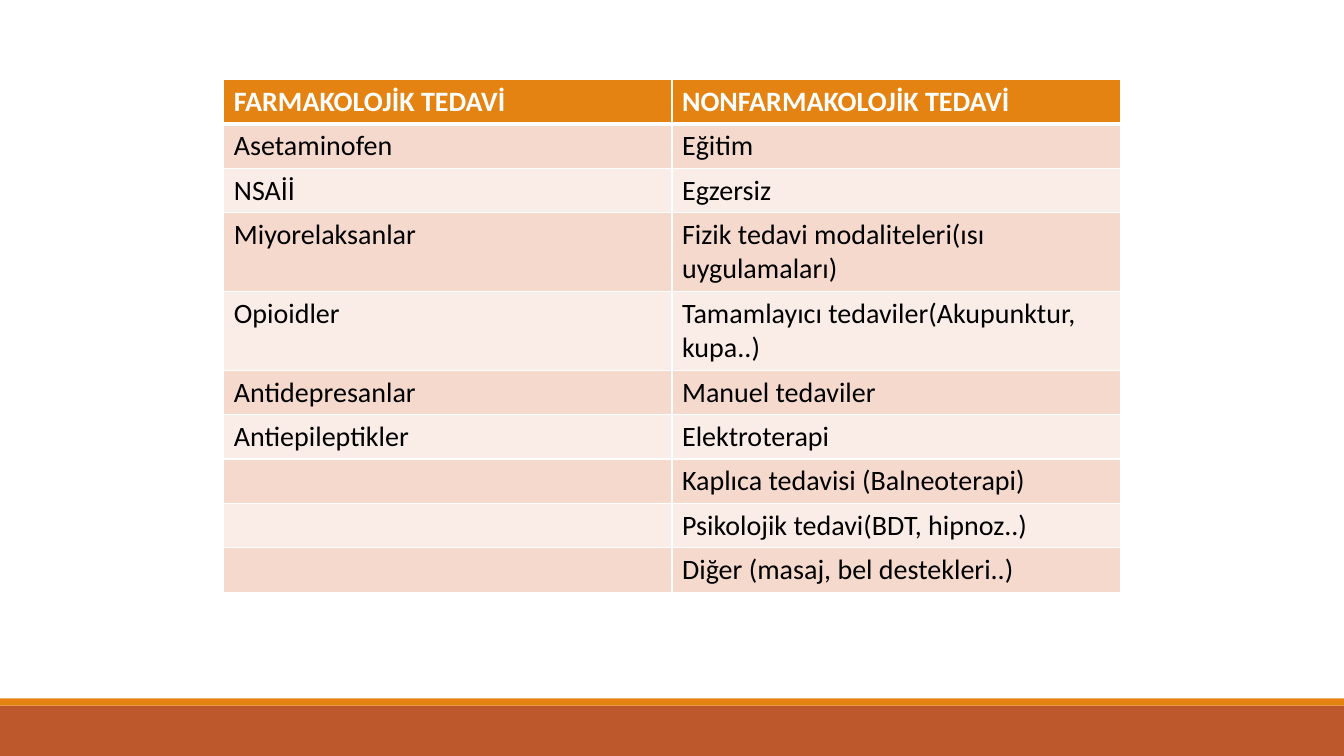
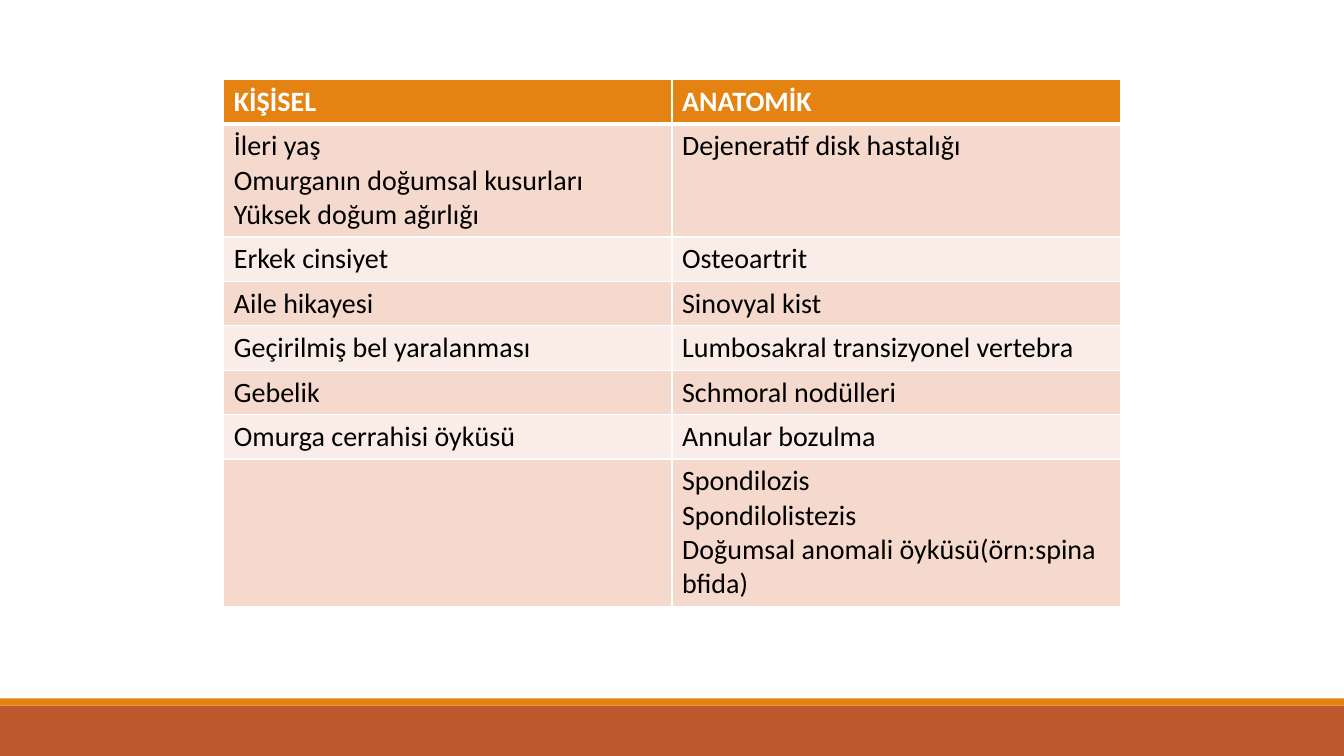
"""Build two slides with treatment and risk factor tables."""
from lxml import etree
from pptx import Presentation
from pptx.dml.color import RGBColor
from pptx.enum import shapes
from pptx.oxml import ns
from pptx.util import Inches, Pt

WHITE = RGBColor(0xFF, 0xFF, 0xFF)
BLACK = RGBColor(0x00, 0x00, 0x00)
ORANGE = RGBColor(0xE4, 0x83, 0x12)
RUST = RGBColor(0xBD, 0x58, 0x2C)
ROSE = RGBColor(0xF5, 0xD9, 0xCC)
PALE = RGBColor(0xFA, 0xED, 0xE7)
FONT = "Calibri"
WIDE, HIGH = 13.33, 7.5
COL, ROW = 4.445, 0.41

CARE = [
    ("FARMAKOLOJİK TEDAVİ", "NONFARMAKOLOJİK TEDAVİ"),
    ("Asetaminofen", "Eğitim"),
    ("NSAİİ", "Egzersiz"),
    ("Miyorelaksanlar", "Fizik tedavi modaliteleri(ısı uygulamaları)"),
    ("Opioidler", "Tamamlayıcı tedaviler(Akupunktur, kupa..)"),
    ("Antidepresanlar", "Manuel tedaviler"),
    ("Antiepileptikler", "Elektroterapi"),
    ("", "Kaplıca tedavisi (Balneoterapi)"),
    ("", "Psikolojik tedavi(BDT, hipnoz..)"),
    ("", "Diğer (masaj, bel destekleri..)"),
]
RISKS = [
    ("KİŞİSEL", "ANATOMİK"),
    ("İleri yaş\nOmurganın doğumsal kusurları\nYüksek doğum ağırlığı",
     "Dejeneratif disk hastalığı"),
    ("Erkek cinsiyet", "Osteoartrit"),
    ("Aile hikayesi", "Sinovyal kist"),
    ("Geçirilmiş bel yaralanması", "Lumbosakral transizyonel vertebra"),
    ("Gebelik", "Schmoral nodülleri"),
    ("Omurga cerrahisi öyküsü", "Annular bozulma"),
    ("", "Spondilozis\nSpondilolistezis\n"
     "Doğumsal anomali öyküsü(örn:spina bfida)"),
]


def add_band(slide, top, height, color):
    band = slide.shapes.add_shape(
        shapes.MSO_SHAPE.RECTANGLE, 0, Inches(top), Inches(WIDE), Inches(height))
    band.shadow.inherit = False
    band.fill.solid()
    band.fill.fore_color.rgb = color
    band.line.fill.background()


def set_edge(cell, side, width):
    props = cell._tc.get_or_add_tcPr()
    line = etree.SubElement(props, ns.qn("a:" + side), w=str(Pt(width)))
    fill = etree.SubElement(line, ns.qn("a:solidFill"))
    etree.SubElement(fill, ns.qn("a:srgbClr"), val=str(WHITE))


def add_text(cell, words, color, bold):
    frame = cell.text_frame
    for i, line in enumerate(words.split("\n")):
        para = frame.add_paragraph() if i else frame.paragraphs[0]
        run = para.add_run()
        run.text = line
        run.font.name = FONT
        run.font.size = Pt(20)
        run.font.bold = bold
        run.font.color.rgb = color


def fill_cell(cell, words, row):
    head = row == 0
    for side in ("lnL", "lnR", "lnT", "lnB"):
        thick = (row, side) in ((0, "lnB"), (1, "lnT"))
        set_edge(cell, side, 3 if thick else 1)
    cell.fill.solid()
    cell.fill.fore_color.rgb = ORANGE if head else ROSE if row % 2 else PALE
    if words:
        add_text(cell, words, WHITE if head else BLACK, head)


def add_grid(slide, rows):
    count = len(rows[0])
    width = COL * count
    frame = slide.shapes.add_table(
        len(rows), count, Inches((WIDE - width) / 2), Inches(0.79),
        Inches(width), Inches(ROW * len(rows)))
    for r, row in enumerate(rows):
        for c, words in enumerate(row):
            fill_cell(frame.table.cell(r, c), words, r)


def add_page(deck, rows):
    slide = deck.slides.add_slide(deck.slide_layouts[6])
    add_band(slide, 7, 0.5, RUST)
    add_band(slide, 6.93, 0.07, ORANGE)
    add_grid(slide, rows)


def main():
    deck = Presentation()
    deck.slide_width = Inches(WIDE)
    deck.slide_height = Inches(HIGH)
    for rows in (CARE, RISKS):
        add_page(deck, rows)
    deck.save("out.pptx")


if __name__ == "__main__":
    main()
